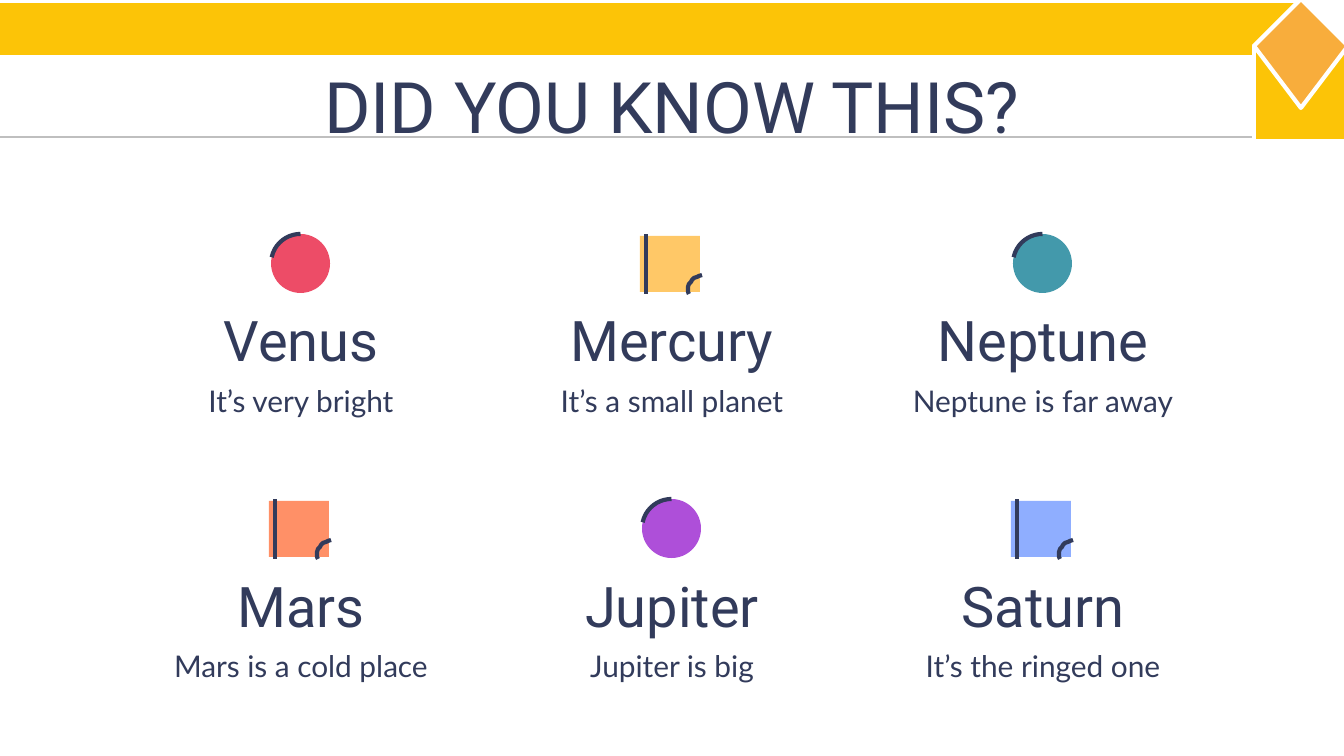
from dataclasses import dataclass

from lxml import etree
from pptx import Presentation
from pptx.dml.color import RGBColor
from pptx.enum.shapes import MSO_CONNECTOR, MSO_SHAPE
from pptx.enum.text import MSO_ANCHOR, PP_ALIGN
from pptx.oxml.ns import qn
from pptx.util import Emu, Pt

STRAIGHT = MSO_CONNECTOR.STRAIGHT
RECTANGLE, OVAL, ARC = MSO_SHAPE.RECTANGLE, MSO_SHAPE.OVAL, MSO_SHAPE.ARC
TOP, CENTER = MSO_ANCHOR.TOP, PP_ALIGN.CENTER

WIDTH, HEIGHT = 1344, 756
EMU_PER_PX = 9144000 / WIDTH
TITLE_ONLY = 5
GRID_LEFT, GRID_TOP = 157, 234
COLUMN_PITCH, ROW_PITCH = 371, 265
COLUMNS = 3
TEXT_WIDTH = 288
INSET = 13


@dataclass(frozen=True)
class Theme:
    ink: str = "323B5B"
    paper: str = "FFFFFF"
    band: str = "FCC407"
    diamond: str = "F8AD3C"
    rule: str = "BFBFBF"
    heading_font: str = "Roboto"
    body_font: str = "Lato"
    title_size: int = 38
    name_size: int = 30
    fact_size: int = 16
    stroke: float = 2.25
    hairline: float = 0.75


@dataclass(frozen=True)
class Planet:
    name: str
    fact: str
    color: str
    is_round: bool


THEME = Theme()
PLANETS = [
    Planet("Venus", "It’s very bright", "ED4C67", True),
    Planet("Mercury", "It’s a small planet", "FFC867", False),
    Planet("Neptune", "Neptune is far away", "4399AB", True),
    Planet("Mars", "Mars is a cold place", "FF9067", False),
    Planet("Jupiter", "Jupiter is big", "AE4FD9", True),
    Planet("Saturn", "It’s the ringed one", "8FAEFF", False),
]


def px(length: int) -> Emu:
    return Emu(round(length * EMU_PER_PX))


def style_shape(shape, fill: str | None, line: str | None) -> None:
    shape.shadow.inherit = False
    if fill:
        shape.fill.solid()
        shape.fill.fore_color.rgb = RGBColor.from_string(fill)
    else:
        shape.fill.background()
    if line:
        shape.line.color.rgb = RGBColor.from_string(line)
        shape.line.width = Pt(THEME.stroke)
    else:
        shape.line.fill.background()


def add_preset(slide, kind, left: int, top: int, width: int, height: int,
               fill: str | None = None, line: str | None = None):
    shape = slide.shapes.add_shape(kind, px(left), px(top), px(width), px(height))
    style_shape(shape, fill, line)
    return shape


def add_outline(slide, points: list, closed: bool,
                fill: str | None, line: str) -> None:
    builder = slide.shapes.build_freeform(*points[0], scale=EMU_PER_PX)
    builder.add_line_segments(points[1:], close=closed)
    style_shape(builder.convert_to_shape(), fill, line)


def add_line(slide, x1: int, y1: int, x2: int, y2: int,
             color: str, weight: float) -> None:
    line = slide.shapes.add_connector(STRAIGHT, px(x1), px(y1), px(x2), px(y2))
    line.line.color.rgb = RGBColor.from_string(color)
    line.line.width = Pt(weight)
    etree.SubElement(line._element.spPr, qn("a:effectLst"))


def set_text(shape, text: str, font: str, size: int) -> None:
    frame = shape.text_frame
    frame.text = text
    frame.word_wrap = True
    frame.vertical_anchor = TOP
    frame.margin_left = frame.margin_right = px(INSET)
    frame.margin_top = frame.margin_bottom = px(INSET)
    paragraph = frame.paragraphs[0]
    paragraph.alignment = CENTER
    run_font = paragraph.runs[0].font
    run_font.name = font
    run_font.size = Pt(size)
    run_font.color.rgb = RGBColor.from_string(THEME.ink)


def add_label(slide, left: int, top: int, height: int,
              text: str, font: str, size: int) -> None:
    box = slide.shapes.add_textbox(px(left), px(top), px(TEXT_WIDTH), px(height))
    set_text(box, text, font, size)


def curve_points(start, control1, control2, end, steps: int = 10) -> list:
    """Sample a cubic curve as a list of points."""
    points = []
    for step in range(steps + 1):
        t = step / steps
        weights = ((1 - t) ** 3, 3 * t * (1 - t) ** 2, 3 * t * t * (1 - t), t ** 3)
        points.append(tuple(
            sum(weight * value for weight, value in zip(weights, values))
            for values in zip(start, control1, control2, end)))
    return points


def add_round_icon(slide, left: int, top: int, color: str) -> None:
    add_preset(slide, OVAL, left, top, 59, 59, fill=color)
    arc = add_preset(slide, ARC, left, top, 59, 59, line=THEME.ink)
    arc.adjustments[0] = 115.25
    arc.adjustments[1] = 162


def add_square_icon(slide, left: int, top: int, color: str) -> None:
    add_preset(slide, RECTANGLE, left, top + 2, 60, 56, fill=color)
    add_line(slide, left + 6, top + 60, left + 6, top, THEME.ink, THEME.stroke)
    corner = curve_points((left + 49, top + 60), (left + 45, top + 52),
                          (left + 53, top + 43), (left + 62, top + 41))
    add_outline(slide, corner, False, None, THEME.ink)


def add_planet(slide, planet: Planet, left: int, top: int) -> None:
    if planet.is_round:
        add_round_icon(slide, left + 114, top, planet.color)
    else:
        add_square_icon(slide, left + 112, top, planet.color)
    add_label(slide, left, top + 59, 81, planet.name,
              THEME.heading_font, THEME.name_size)
    add_label(slide, left, top + 136, 59, planet.fact,
              THEME.body_font, THEME.fact_size)


def add_header(slide) -> None:
    add_line(slide, 1301, 137, 0, 137, THEME.rule, THEME.hairline)
    add_preset(slide, RECTANGLE, 0, 3, 1298, 52, fill=THEME.band)
    add_preset(slide, RECTANGLE, 1254, 46, 94, 95, fill=THEME.band, line=THEME.paper)
    add_outline(slide, [(1348, 46), (1301, -1), (1254, 46), (1301, 108)], True,
                THEME.diamond, THEME.paper)
    title = slide.shapes.title
    title.left, title.top, title.width, title.height = px(105), px(50), px(1134), px(103)
    set_text(title, "DID YOU KNOW THIS?", THEME.heading_font, THEME.title_size)


def main() -> None:
    presentation = Presentation()
    presentation.slide_width, presentation.slide_height = px(WIDTH), px(HEIGHT)
    slide = presentation.slides.add_slide(presentation.slide_layouts[TITLE_ONLY])
    slide.background.fill.solid()
    slide.background.fill.fore_color.rgb = RGBColor.from_string(THEME.paper)
    add_header(slide)
    for index, planet in enumerate(PLANETS):
        row, column = divmod(index, COLUMNS)
        add_planet(slide, planet, GRID_LEFT + column * COLUMN_PITCH,
                   GRID_TOP + row * ROW_PITCH)
    presentation.save("out.pptx")


if __name__ == "__main__":
    main()
